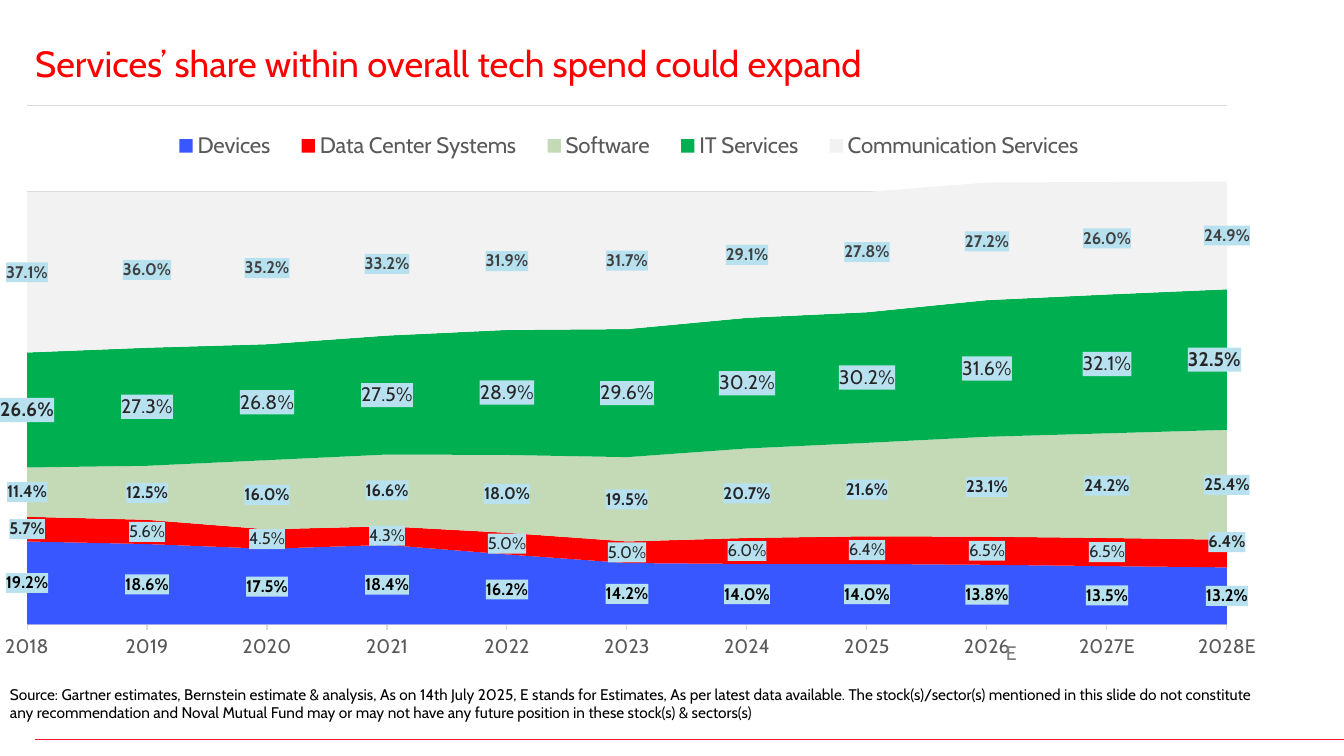
from pptx import Presentation
from pptx.chart.data import CategoryChartData
from pptx.dml.color import RGBColor
from pptx.enum.chart import XL_CHART_TYPE, XL_LEGEND_POSITION, XL_TICK_LABEL_POSITION, XL_TICK_MARK
from pptx.enum.shapes import MSO_CONNECTOR
from pptx.enum.text import MSO_ANCHOR, MSO_AUTO_SIZE, PP_ALIGN
from pptx.oxml import parse_xml
from pptx.oxml.ns import nsdecls, qn
from pptx.util import Emu, Pt

AREA = XL_CHART_TYPE.AREA_STACKED
LEGEND_TOP = XL_LEGEND_POSITION.TOP
NO_LABELS = XL_TICK_LABEL_POSITION.NONE
TICK_OUT, TICK_NONE = XL_TICK_MARK.OUTSIDE, XL_TICK_MARK.NONE
STRAIGHT = MSO_CONNECTOR.STRAIGHT
TOP, LEFT, FIXED = MSO_ANCHOR.TOP, PP_ALIGN.LEFT, MSO_AUTO_SIZE.NONE

FONT = "Cabin"
PERCENT = "0.0%"
RED = RGBColor(0xFF, 0x00, 0x00)
BLACK = RGBColor(0x00, 0x00, 0x00)
INK = RGBColor(0x26, 0x26, 0x26)
DARK_GREY = RGBColor(0x40, 0x40, 0x40)
TEXT_GREY = RGBColor(0x59, 0x59, 0x59)
MARK_GREY = RGBColor(0x7C, 0x7C, 0x7C)
RULE_GREY = RGBColor(0xD9, 0xD9, 0xD9)
FOOTER_RED = RGBColor(0xFA, 0x14, 0x32)
BLUE = RGBColor(0x38, 0x57, 0xFF)
SAGE = RGBColor(0xC4, 0xDA, 0xB7)
GREEN = RGBColor(0x00, 0xB0, 0x50)
PALE_GREY = RGBColor(0xF2, 0xF2, 0xF2)
LABEL_BLUE = RGBColor(0xB7, 0xE1, 0xEE)

YEARS = ["2018", "2019", "2020", "2021", "2022", "2023", "2024", "2025", "2026", "2027E", "2028E"]
# name, percentages, fill, label size, label colour, bold
SPEND = [
    ("Devices", [19.2, 18.6, 17.5, 18.4, 16.2, 14.2, 14.0, 14.0, 13.8, 13.5, 13.2],
     BLUE, 12, BLACK, True),
    ("Data Center Systems", [5.7, 5.6, 4.5, 4.3, 5.0, 5.0, 6.0, 6.4, 6.5, 6.5, 6.4],
     RED, 12, INK, False),
    ("Software", [11.4, 12.5, 16.0, 16.6, 18.0, 19.5, 20.7, 21.6, 23.1, 24.2, 25.4],
     SAGE, 12, INK, True),
    ("IT Services", [26.6, 27.3, 26.8, 27.5, 28.9, 29.6, 30.2, 30.2, 31.6, 32.1, 32.5],
     GREEN, 14, INK, False),
    ("Communication Services", [37.1, 36.0, 35.2, 33.2, 31.9, 31.7, 29.1, 27.8, 27.2, 26.0, 24.9],
     PALE_GREY, 12, DARK_GREY, True),
]
# Series with bold end labels: shift of the last label as a share of the chart
END_SHIFTS = {"Data Center Systems": (0, -0.02), "IT Services": (-0.01, 0)}


def px(length):
    return Emu(round(length * 914400 / 100.8))


def set_font(font, size, color, bold=False):
    font.name, font.size, font.bold = FONT, Pt(size), bold
    font.color.rgb = color


def write_text(shape, text, size, color):
    frame = shape.text_frame
    frame.word_wrap, frame.auto_size, frame.vertical_anchor = True, FIXED, TOP
    para = frame.paragraphs[0]
    para.alignment = LEFT
    span = para.add_run()
    span.text = text
    set_font(span.font, size, color)


def add_text(page, box, text, size, color):
    shape = page.shapes.add_textbox(*map(px, box))
    write_text(shape, text, size, color)
    return shape


def add_title(page, box, text):
    title = page.shapes.title
    title.left, title.top, title.width, title.height = map(px, box)
    write_text(title, text, 26, RED)


def add_footer_line(page, left, top, right):
    line = page.shapes.add_connector(STRAIGHT, px(left), px(top), px(right), px(top))
    line.line.color.rgb, line.line.width = FOOTER_RED, Pt(0.5)
    line._element.spPr.append(parse_xml(f"<a:effectLst {nsdecls('a')}/>"))


def manual_layout(target="", mode="edge", **sizes):
    inner = f'<c:layoutTarget val="{target}"/>' if target else ""
    if mode == "edge":
        inner += '<c:xMode val="edge"/><c:yMode val="edge"/>'
    inner += "".join(f'<c:{key} val="{value}"/>' for key, value in sizes.items())
    return parse_xml(f"<c:layout {nsdecls('c')}><c:manualLayout>{inner}</c:manualLayout></c:layout>")


def replace_layout(element, before, layout):
    for old in element.findall(qn("c:layout")):
        element.remove(old)
    if before is None:
        element.insert(0, layout)
    else:
        before.addnext(layout)


def fill_label(element):
    element.find(qn("c:txPr")).addprevious(parse_xml(
        f'<c:spPr {nsdecls("c", "a")}><a:solidFill><a:srgbClr val="{LABEL_BLUE}"/>'
        "</a:solidFill><a:ln><a:noFill/></a:ln></c:spPr>"))


def label_series(series, size, color, bold):
    labels = series.data_labels
    labels.show_value = True
    labels.number_format, labels.number_format_is_linked = PERCENT, False
    set_font(labels.font, size, color, bold)
    fill_label(labels._element)
    if series.name not in END_SHIFTS:
        return
    for index in (0, len(YEARS) - 1):
        set_font(series.points[index].data_label.font, size, color, True)
    first, last = series._element.xpath(".//c:dLbl")
    for label in (first, last):
        fill_label(label)
        label.find(qn("c:spPr")).addprevious(parse_xml(
            f'<c:numFmt {nsdecls("c")} formatCode="{PERCENT}" sourceLinked="0"/>'))
    shift_x, shift_y = END_SHIFTS[series.name]
    replace_layout(last, last.find(qn("c:idx")), manual_layout(mode="shift", x=shift_x, y=shift_y))


def format_axes(chart):
    years = chart.category_axis
    years.major_tick_mark, years.minor_tick_mark = TICK_OUT, TICK_NONE
    set_font(years.tick_labels.font, 14, TEXT_GREY)
    years.format.line.color.rgb, years.format.line.width = RULE_GREY, Pt(0.75)

    shares = chart.value_axis
    shares.minimum_scale, shares.maximum_scale, shares.major_unit = 0, 1.2, 0.2
    shares.major_tick_mark = shares.minor_tick_mark = TICK_NONE
    shares.tick_label_position = NO_LABELS
    shares.format.line.fill.background()
    shares.has_major_gridlines = True
    grid = shares.major_gridlines.format.line
    grid.color.rgb, grid.width = RULE_GREY, Pt(0.75)
    for crossing in shares._element.findall(qn("c:crossBetween")):
        crossing.set("val", "midCat")


def add_spend_chart(page, box):
    data = CategoryChartData(number_format=PERCENT)
    data.categories = YEARS
    for name, percentages, *_ in SPEND:
        data.add_series(name, [round(value / 100, 3) for value in percentages])
    chart = page.shapes.add_chart(AREA, *map(px, box), data).chart
    chart.has_title = False
    set_font(chart.font, 10, BLACK)

    # Stacked bands and their labels
    for series, (_, _, fill, size, color, bold) in zip(chart.plots[0].series, SPEND):
        series.format.fill.solid()
        series.format.fill.fore_color.rgb = fill
        series.format.line.fill.background()
        label_series(series, size, color, bold)
    format_axes(chart)
    plot_area = chart._chartSpace.chart.plotArea
    replace_layout(plot_area, None, manual_layout("inner", x=0.017, y=0, w=0.963, h=0.902))

    # Legend
    chart.has_legend = True
    legend = chart.legend
    legend.position, legend.include_in_layout = LEGEND_TOP, False
    set_font(legend.font, 16, TEXT_GREY)
    replace_layout(legend._element, legend._element.find(qn("c:legendPos")),
                   manual_layout(x=0.12, y=0.04, w=0.76, h=0.06))


def add_estimate_mark(page, box):
    mark = add_text(page, box, "E", 14, MARK_GREY)
    mark.rotation = 180
    mark.text_frame._txBody.bodyPr.set("rot", "10800000")


def build_spend_slide(deck):
    page = deck.slides.add_slide(deck.slide_layouts[5])
    add_footer_line(page, 35, 739, 1344)
    add_title(page, (25, 36, 1050, 56), "Services’ share within overall tech spend could expand")
    add_text(page, (0, 680, 1280, 47),
             "Source: Gartner estimates, Bernstein estimate & analysis, As on 14th July 2025, "
             "E stands for Estimates, As per latest data available. The stock(s)/sector(s) mentioned "
             "in this slide do not constitute any recommendation and Noval Mutual Fund may or may not "
             "have any future position in these stock(s) & sectors(s)", 11, BLACK)
    add_spend_chart(page, (0, 105, 1256, 576))
    add_estimate_mark(page, (996, 636, 39, 34))


def main():
    deck = Presentation()
    deck.slide_width, deck.slide_height = px(1344), px(756)
    build_spend_slide(deck)
    deck.save("out.pptx")


if __name__ == "__main__":
    main()
